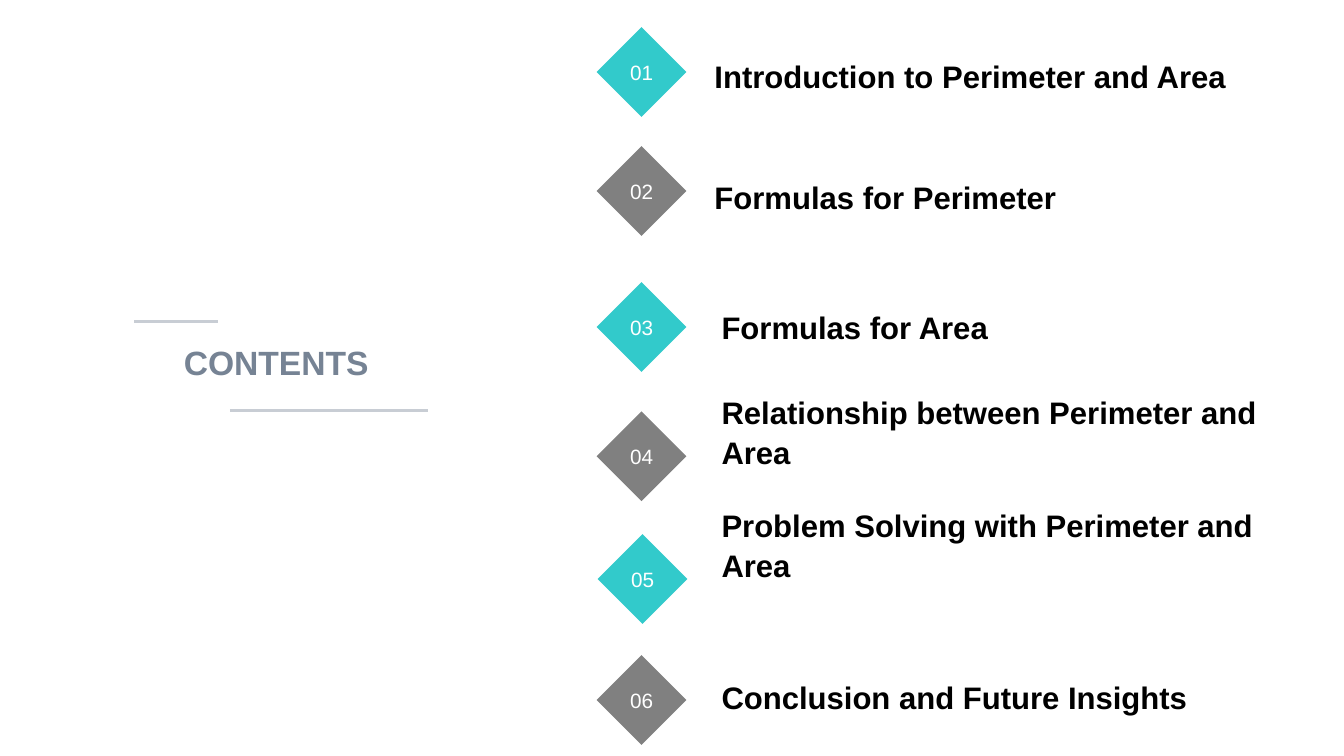
from pptx import Presentation
from pptx.dml.color import RGBColor
from pptx.enum import shapes as sh, text as tx
from pptx.oxml import parse_xml
from pptx.oxml.ns import nsdecls
from pptx.util import Pt

HUES = {"teal": "32CACB", "gray": "808080", "slate": "768394",
        "rule": "C8CDD4", "white": "FFFFFF", "black": "000000"}
ITEMS = [
    ("Introduction to Perimeter and Area", 19.4, 503.3, 42.5),
    ("Formulas for Perimeter", 104.4, 503.3, 128.9),
    ("Formulas for Area", 201.6, 508.3, 221.8),
    ("Relationship between Perimeter and Area", 293.8, 508.3, 311),
    ("Problem Solving with Perimeter and Area", 381.6, 508.3, 391.7),
    ("Conclusion and Future Insights", 468, 508.3, 486),
]


def tint(name):
    """Return the named colour."""
    return RGBColor.from_string(HUES[name])


def write(shape, words, size, hue, bold, align, anchor, wrap=True):
    """Set and format the one paragraph of a shape."""
    frame = shape.text_frame
    frame.text = words
    frame.word_wrap = wrap
    frame.auto_size = tx.MSO_AUTO_SIZE.NONE
    frame.vertical_anchor = anchor
    para = frame.paragraphs[0]
    para.alignment = align
    font = para.runs[0].font
    font.name, font.size, font.bold = "Arial", Pt(size), bold
    font.color.rgb = tint(hue)
    return para


def rule(slide, start, end, y):
    """Draw a level line from start to end."""
    line = slide.shapes.add_connector(
        sh.MSO_CONNECTOR.STRAIGHT, Pt(start), Pt(y), Pt(end), Pt(y))
    line.line.color.rgb = tint("rule")
    line.line.width = Pt(1.75)
    line._element.spPr.append(parse_xml(f"<a:effectLst {nsdecls('a')}/>"))


def heading(slide, x, y, w, h):
    """Place the title between its two offset rules."""
    title = slide.shapes.title
    title.left, title.top, title.width, title.height = Pt(x), Pt(y), Pt(w), Pt(h)
    write(title, "CONTENTS", 24, "slate", True,
          tx.PP_ALIGN.CENTER, tx.MSO_ANCHOR.TOP)
    rule(slide, x + 36.7, x - 23, y - 10.8)
    rule(slide, x + 45.4, x + 187.2, y + 52.6)


def gem(slide, x, y, side, number):
    """Place a numbered diamond, teal when odd and gray when even."""
    mark = slide.shapes.add_shape(
        sh.MSO_SHAPE.DIAMOND, Pt(x), Pt(y), Pt(side), Pt(side))
    mark.shadow.inherit = False
    mark.fill.solid()
    mark.fill.fore_color.rgb = tint("teal" if number % 2 else "gray")
    mark.line.fill.background()
    write(mark, f"{number:02}", 14.8, "white", False,
          tx.PP_ALIGN.CENTER, tx.MSO_ANCHOR.MIDDLE, False)


def label(slide, x, y, w, h, words):
    """Place the name of one section."""
    box = slide.shapes.add_textbox(Pt(x), Pt(y), Pt(w), Pt(h))
    para = write(box, words, 22.2, "black", True,
                 tx.PP_ALIGN.LEFT, tx.MSO_ANCHOR.BOTTOM)
    para.line_spacing = 1.07


def agenda(slide, x, y):
    """Place the numbered sections from the given corner."""
    for number, (words, top, left, base) in enumerate(ITEMS, 1):
        gem(slide, x + (0.7 if number == 5 else 0), y + top, 64.1, number)
        label(slide, x + left - 426.2, y + base, 404, 28.8, words)


def main():
    """Build and save the contents slide."""
    deck = Presentation()
    deck.slide_width, deck.slide_height = Pt(960), Pt(540)
    slide = deck.slides.add_slide(deck.slide_layouts.get_by_name("Title Only"))
    heading(slide, 118.8, 240.5, 157, 41.8)
    agenda(slide, 426.2, 0)
    deck.save("out.pptx")


if __name__ == "__main__":
    main()
